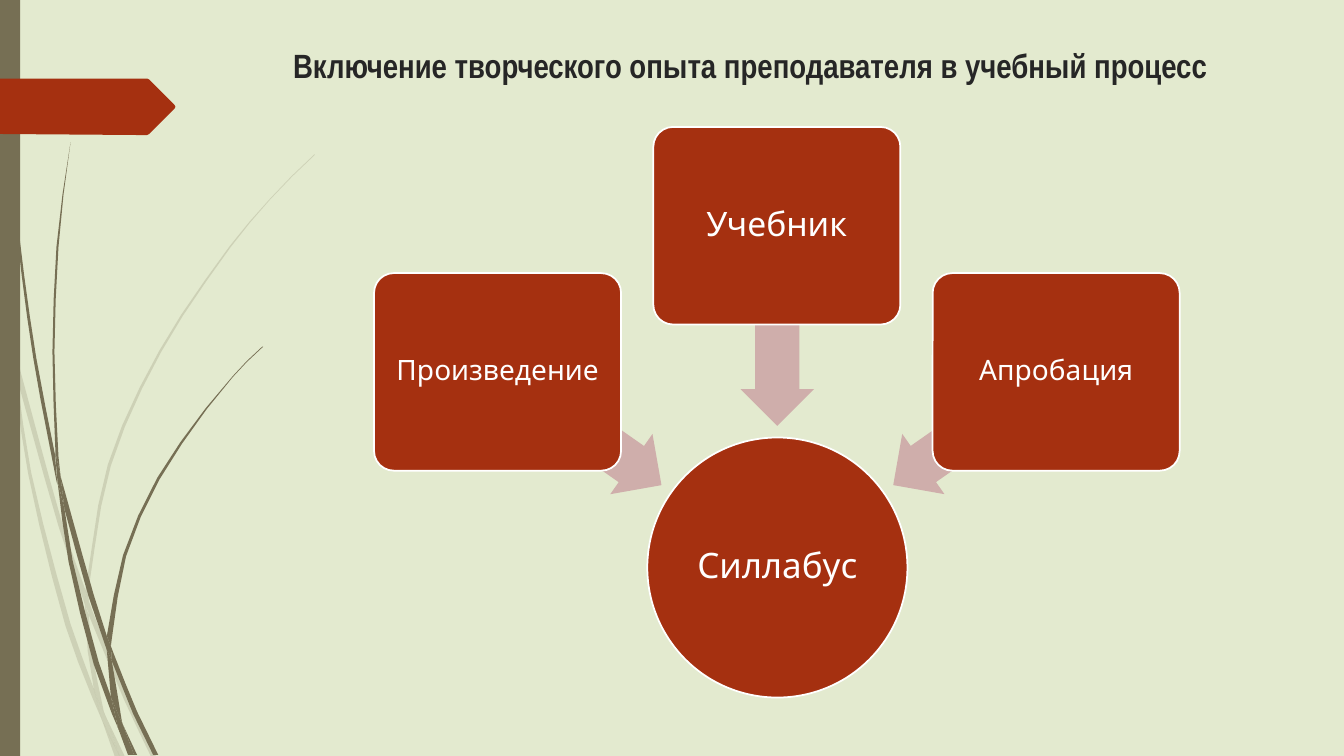
import dataclasses
import math

import lxml.etree
import pptx
import pptx.dml.color
import pptx.enum.shapes
import pptx.enum.text
import pptx.oxml.ns
import pptx.util

SHAPE = pptx.enum.shapes.MSO_SHAPE
COLUMNS, ROWS = 1333, 750
CELL = pptx.util.Inches(0.01)


@dataclasses.dataclass(frozen=True)
class Theme:
    background: str = "E3EACF"
    stem: str = "766F54"
    accent: str = "A53010"
    arrow: str = "CFAEAB"
    outline: str = "FFFFFF"
    label: str = "FFFFFF"
    heading: str = "262626"
    heading_font: str = "Arial Narrow"
    label_font: str = "League Spartan"
    heading_size: int = 24
    result_size: int = 25
    main_size: int = 24
    side_size: int = 20
    outline_width: float = 1.25
    faded_alpha: int = 20


THEME = Theme()

FADED_GRASS = [
    ([(0, 299), (10, 344), (11, 350)], [(9, 322), (0, 282)]),
    ([(17, 376), (58, 522), (84, 599)], [(85, 586), (62, 520), (14, 345)]),
    ([(88, 610), (123, 694), (150, 751)],
     [(155, 751), (127, 692), (92, 607), (88, 596)]),
    ([(105, 711), (119, 751)], [(124, 751)]),
    ([(11, 350), (28, 470), (65, 621), (92, 693), (101, 714)],
     [(99, 707), (93, 683), (70, 619), (31, 469), (17, 376)]),
    ([(84, 599), (87, 646), (93, 683), (96, 692), (105, 711)],
     [(103, 706), (91, 646), (88, 610)]),
    ([(88, 596), (88, 584), (110, 462), (160, 349), (229, 245), (268, 198),
      (290, 175), (312, 154)],
     [(312, 153), (289, 175), (268, 197), (228, 244), (158, 348), (107, 461),
      (85, 584), (85, 586)]),
    ([(101, 714), (114, 751)], [(119, 751)]),
    ([(85, 586), (84, 599), (88, 608)], [(88, 610), (88, 596)]),
    ([(93, 683), (99, 707), (101, 714), (119, 751)],
     [(105, 711), (96, 692)]),
]

DARK_GRASS = [
    ([(3, 0), (4, 48), (7, 110), (17, 233), (33, 355), (56, 477), (57, 481)],
     [(55, 457), (55, 453), (36, 355), (19, 232), (8, 109), (5, 48), (4, 0)]),
    ([(64, 505), (88, 592), (106, 645)],
     [(106, 633), (106, 631), (93, 590), (60, 472)]),
    ([(110, 641), (111, 656), (132, 708), (152, 749)],
     [(157, 749), (136, 706), (113, 649)]),
    ([(57, 477), (68, 557), (93, 659), (111, 708), (117, 722)],
     [(116, 717), (110, 691), (98, 657), (72, 556), (64, 505)]),
    ([(60, 472), (58, 453), (54, 349), (58, 245), (63, 193), (70, 141)],
     [(62, 193), (56, 245), (52, 349), (55, 449)]),
    ([(122, 719), (133, 749)], [(136, 749)]),
    ([(55, 449), (55, 453), (57, 477), (64, 505)], [(60, 472)]),
    ([(110, 641), (111, 633), (125, 552), (158, 476), (205, 406), (231, 374),
      (245, 359), (261, 344)],
     [(260, 344), (245, 358), (231, 373), (204, 405), (156, 474), (122, 551),
      (106, 631)]),
    ([(117, 722), (127, 749)], [(131, 749)]),
    ([(106, 645), (110, 691), (116, 706), (122, 719)],
     [(121, 716), (111, 656), (109, 651)]),
    ([(106, 631), (106, 645), (109, 651), (111, 656)], [(110, 641)]),
    ([(110, 691), (116, 717), (117, 722), (130, 749)],
     [(133, 749), (122, 719), (116, 706)]),
]

BOOKMARK = [(0, 78), (146, 78), (148, 79), (173, 104), (174, 106),
            (173, 108), (148, 133), (146, 134), (136, 134), (0, 133)]

SOURCES = [
    ("Произведение", 271, 388, 215, THEME.side_size),
    ("Учебник", 126, 287, 270, THEME.main_size),
    ("Апробация", 271, 388, 325, THEME.side_size),
]


def rgb(value):
    return pptx.dml.color.RGBColor.from_string(value)


def apply_format(target, values):
    for key, value in values.items():
        setattr(target, key, value)


def smooth(edge, stride=60):
    last = len(edge) - 1

    def slope(i):
        before, here, after = edge[max(i - 1, 0)], edge[i], edge[min(i + 1, last)]
        span = math.dist(before, here) + math.dist(here, after)
        return [(b - a) / span for a, b in zip(before, after)]

    points = [edge[0]]
    for i, (start, end) in enumerate(zip(edge, edge[1:])):
        length = math.dist(start, end)
        leave, arrive = slope(i), slope(i + 1)
        steps = math.ceil(length / stride)
        for step in range(1, steps + 1):
            t = step / steps
            blend = t * t * (3 - 2 * t)
            points.append(tuple(
                a + (b - a) * blend
                + length * (m * t * (1 - t) ** 2 - n * t * t * (1 - t))
                for a, b, m, n in zip(start, end, leave, arrive)))
    return points


def paint(shape, color, outline=None, alpha=None):
    shape.shadow.inherit = False
    shape.fill.solid()
    shape.fill.fore_color.rgb = rgb(color)
    if alpha:
        qn = pptx.oxml.ns.qn
        for tone in shape._element.spPr.iter(qn("a:srgbClr")):
            lxml.etree.SubElement(tone, qn("a:alpha"), val=str(alpha * 1000))
    if outline:
        shape.line.color.rgb = rgb(outline)
        shape.line.width = pptx.util.Pt(THEME.outline_width)
    else:
        shape.line.fill.background()


def add_outline(slide, points, color, alpha=None):
    corners = [(round(x * CELL), round(y * CELL)) for x, y in points]
    builder = slide.shapes.build_freeform(*corners[0], scale=1.0)
    builder.add_line_segments(corners[1:], close=True)
    paint(builder.convert_to_shape(), color, alpha=alpha)


def add_block(slide, kind, area, color, outline=None, adjustments=(), rotation=0):
    block = slide.shapes.add_shape(kind, *(v * CELL for v in area))
    for i, value in enumerate(adjustments):
        block.adjustments[i] = value
    block.rotation = rotation
    paint(block, color, outline)
    return block


def write(holder, words, font, color, margins, anchor, spacing=1.0):
    frame = holder.text_frame
    apply_format(frame, {"word_wrap": True, "vertical_anchor": anchor, **{
        f"margin_{side}": pptx.util.Inches(margin)
        for side, margin in zip(("left", "top", "right", "bottom"), margins)}})
    paragraph = frame.paragraphs[0]
    apply_format(paragraph, {"alignment": pptx.enum.text.PP_ALIGN.CENTER,
                             "line_spacing": spacing})
    run = paragraph.add_run()
    run.text = words
    apply_format(run.font, font)
    run.font.color.rgb = rgb(color)


def add_label(block, words, size, margin):
    write(block, words,
          {"name": THEME.label_font, "size": pptx.util.Pt(size)},
          THEME.label, [margin] * 4, pptx.enum.text.MSO_ANCHOR.MIDDLE, 0.9)


def add_title(slide, words):
    title = slide.shapes.add_textbox(*(v * CELL for v in (256, 40, 976, 44)))
    write(title, words,
          {"name": THEME.heading_font, "bold": True,
           "size": pptx.util.Pt(THEME.heading_size)},
          THEME.heading, (0.1, 0.05, 0.1, 0.05), pptx.enum.text.MSO_ANCHOR.TOP)


def add_decoration(slide):
    for grass, alpha in ((FADED_GRASS, THEME.faded_alpha), (DARK_GRASS, None)):
        for near_edge, far_edge in grass:
            add_outline(slide, smooth(near_edge) + smooth(far_edge),
                        THEME.stem, alpha)
    add_block(slide, SHAPE.RECTANGLE, (0, 0, 20, ROWS), THEME.stem)
    add_outline(slide, BOOKMARK, THEME.accent)


def add_diagram(slide):
    result = add_block(slide, SHAPE.OVAL, (642, 434, 258, 258),
                       THEME.accent, THEME.outline)
    add_label(result, "Силлабус", THEME.result_size, 0.02)
    for i, (words, top, arrow_top, angle, size) in enumerate(SOURCES):
        add_block(slide, SHAPE.LEFT_ARROW, (476 + 196 * i, arrow_top, 198, 73),
                  THEME.arrow, adjustments=(0.6, 0.5), rotation=angle)
        source = add_block(slide, SHAPE.ROUNDED_RECTANGLE,
                           (371 + 277 * i, top, 245, 196),
                           THEME.accent, THEME.outline, (0.1,))
        add_label(source, words, size, 0.04)


def main():
    deck = pptx.Presentation()
    apply_format(deck, {"slide_width": COLUMNS * CELL, "slide_height": ROWS * CELL})
    slide = deck.slides.add_slide(deck.slide_layouts[6])
    slide.background.fill.solid()
    slide.background.fill.fore_color.rgb = rgb(THEME.background)
    add_decoration(slide)
    add_title(slide, "Включение творческого опыта преподавателя в учебный процесс")
    add_diagram(slide)
    deck.save("out.pptx")


if __name__ == "__main__":
    main()
